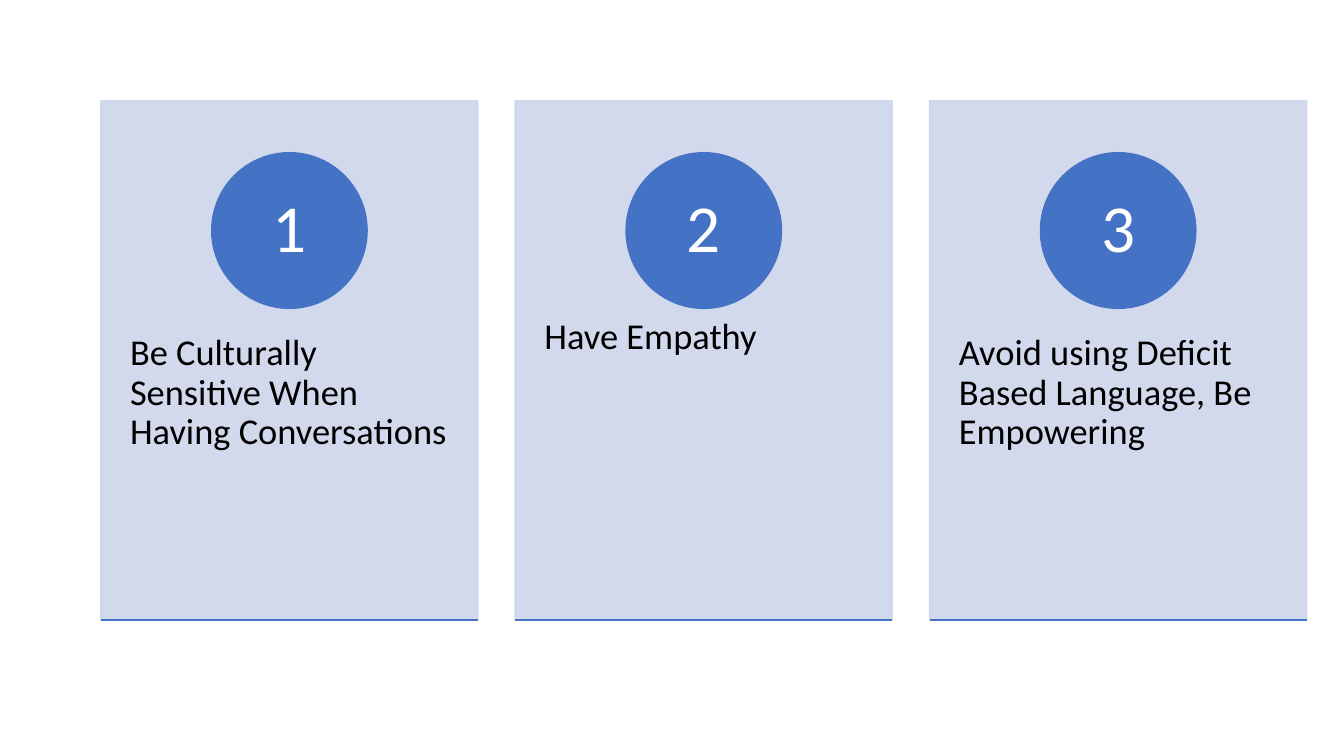
import pptx
import pptx.util
import pptx.dml.color
import pptx.enum.shapes
import pptx.enum.text
import lxml.etree

Inches, Pt = pptx.util.Inches, pptx.util.Pt
RGBColor = pptx.dml.color.RGBColor
Shape = pptx.enum.shapes.MSO_SHAPE
Align, Anchor = pptx.enum.text.PP_ALIGN, pptx.enum.text.MSO_ANCHOR
A = "{http://schemas.openxmlformats.org/drawingml/2006/main}"

COLORS = {"card": "CFD5EA", "accent": "4472C4", "caption": "000000", "number": "FFFFFF"}
TIPS = [
    "Be Culturally Sensitive When Having Conversations",
    "Have Empathy",
    "Avoid using Deficit Based Language, Be Empowering",
]

# Shares of one grid column or row
CARD_WIDTH = 0.91
BADGE_WIDTH, BADGE_HEIGHT, BADGE_TOP = 0.375, 0.3, 0.1
CAPTION_TOP, CAPTION_HEIGHT = 0.38, 0.6


class TipSlide:
    LEFT, TOP = 1, 1
    COLUMN, ROW = 4.11, 5.15
    FONT = "Calibri"

    def __init__(self, deck):
        self.slide = deck.slides.add_slide(deck.slide_layouts[6])

    def place(self, column, row):
        return Inches(self.LEFT + column * self.COLUMN), Inches(self.TOP + row * self.ROW)

    def area(self, column, row, columns, rows):
        return *self.place(column, row), Inches(columns * self.COLUMN), Inches(rows * self.ROW)

    def panel(self, kind, area, color, opacity=100):
        panel = self.slide.shapes.add_shape(kind, *area)
        panel.shadow.inherit = False
        panel.fill.solid()
        panel.line.width = Pt(1)
        for paint in (panel.fill.fore_color, panel.line.color):
            paint.rgb = RGBColor.from_string(COLORS[color])
        if opacity < 100:
            for rgb in panel._element.spPr.iter(A + "srgbClr"):
                lxml.etree.SubElement(rgb, A + "alpha", val=str(opacity * 1000))
        return panel

    def set_words(self, holder, words, size, color, align, anchor, insets):
        frame = holder.text_frame
        side, end = map(Inches, insets)
        frame_format = {
            "word_wrap": True, "vertical_anchor": anchor,
            "margin_left": side, "margin_right": side,
            "margin_top": end, "margin_bottom": end,
        }
        paragraph = frame.paragraphs[0]
        run = paragraph.add_run()
        run.text = words
        run.font.color.rgb = RGBColor.from_string(COLORS[color])
        formats = [
            (frame, frame_format),
            (paragraph, {"alignment": align, "line_spacing": 0.9}),
            (run.font, {"name": self.FONT, "size": Pt(size)}),
        ]
        for target, values in formats:
            for attribute, value in values.items():
                setattr(target, attribute, value)

    def badge(self, area, number):
        badge = self.panel(Shape.OVAL, area, "accent")
        self.set_words(badge, number, 48, "number", Align.CENTER, Anchor.MIDDLE, (0.12, 0.01))

    def caption(self, area, words):
        caption = self.slide.shapes.add_textbox(*area)
        self.set_words(caption, words, 26, "caption", Align.LEFT, Anchor.TOP, (0.29, 0.36))

    def rule(self, column, row, columns):
        start, end = self.place(column, row), self.place(column + columns, row)
        rule = self.slide.shapes.add_connector(
            pptx.enum.shapes.MSO_CONNECTOR.STRAIGHT, *start, *end)
        rule.line.width = Pt(1)
        rule.line.color.rgb = RGBColor.from_string(COLORS["accent"])
        lxml.etree.SubElement(rule._element.spPr, A + "effectLst")


def main():
    deck = pptx.Presentation()
    deck.slide_width, deck.slide_height = Inches(13.33), Inches(7.5)
    page = TipSlide(deck)
    badge_offset = (CARD_WIDTH - BADGE_WIDTH) / 2
    for column, tip in enumerate(TIPS):
        page.panel(Shape.RECTANGLE, page.area(column, 0, CARD_WIDTH, 1), "card", opacity=90)
        page.caption(page.area(column, CAPTION_TOP, CARD_WIDTH, CAPTION_HEIGHT), tip)
        page.badge(page.area(column + badge_offset, BADGE_TOP, BADGE_WIDTH, BADGE_HEIGHT),
                   str(column + 1))
        page.rule(column, 1, CARD_WIDTH)
    deck.save("out.pptx")


if __name__ == "__main__":
    main()
